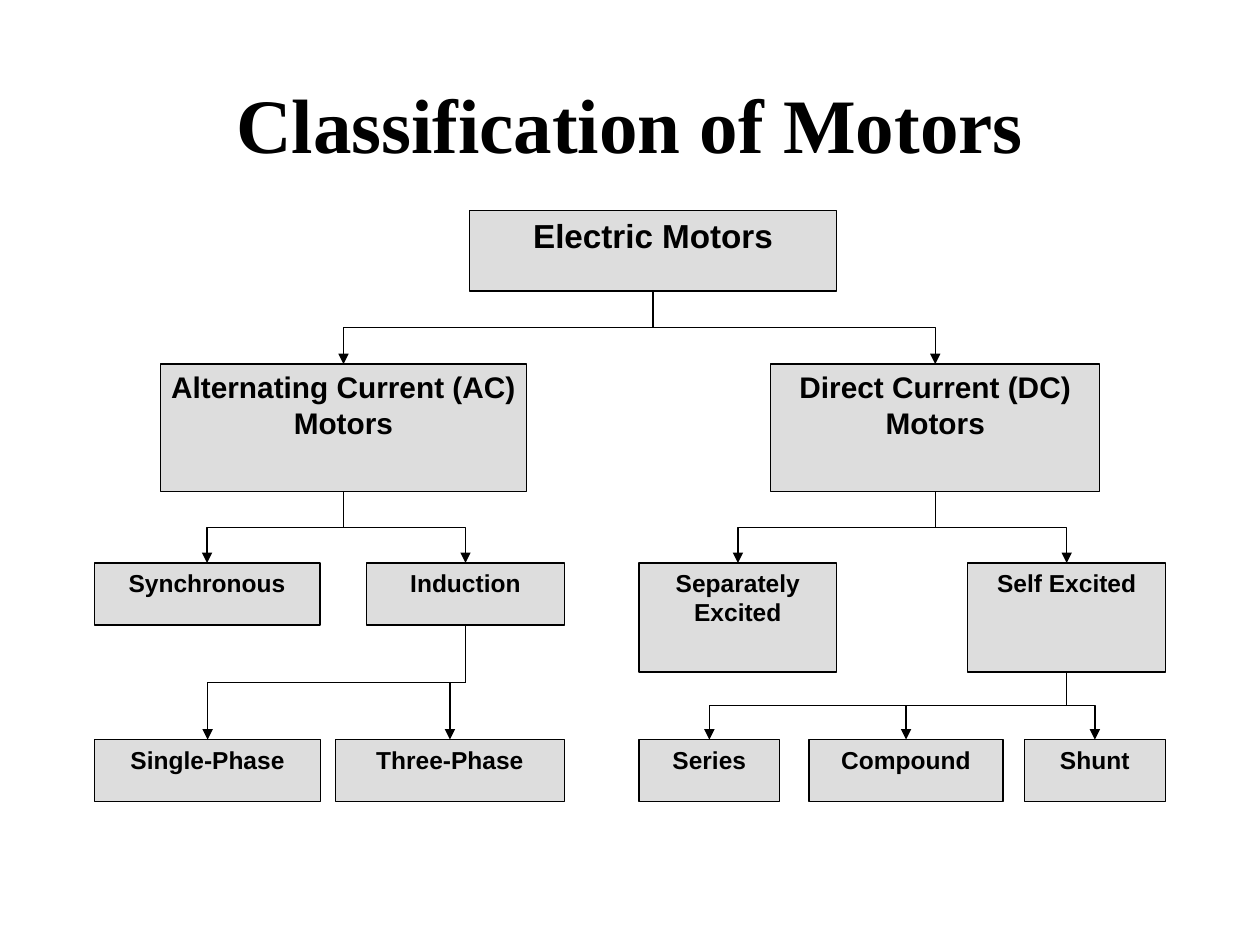
from lxml import etree
from pptx import Presentation
from pptx.dml.color import RGBColor
from pptx.enum.shapes import MSO_CONNECTOR, MSO_SHAPE
from pptx.enum.text import MSO_ANCHOR, PP_ALIGN
from pptx.oxml.ns import qn
from pptx.util import Cm, Pt

ELBOW = MSO_CONNECTOR.ELBOW
RECTANGLE = MSO_SHAPE.RECTANGLE
TOP, MIDDLE = MSO_ANCHOR.TOP, MSO_ANCHOR.MIDDLE
CENTER = PP_ALIGN.CENTER
BOTTOM_SITE, TOP_SITE = 2, 0

TITLE = "Classification of Motors"
BLACK, GREY = "000000", "DDDDDD"
LINE_WIDTH = Pt(0.75)

# Levels of the tree: top (cm), font size (pt), boxes
# Box: name, parent, left, width, height (cm)
LEVELS = [
    (4.24, 19, [("Electric Motors", None, 9.47, 7.39, 1.63)]),
    (7.34, 17, [
        ("Alternating Current (AC) Motors", "Electric Motors", 3.23, 7.39, 2.57),
        ("Direct Current (DC) Motors", "Electric Motors", 15.54, 6.63, 2.57),
    ]),
    (11.35, 14, [
        ("Synchronous", "Alternating Current (AC) Motors", 1.9, 4.55, 1.25),
        ("Induction", "Alternating Current (AC) Motors", 7.39, 3.99, 1.25),
        ("Separately Excited", "Direct Current (DC) Motors", 12.88, 3.99, 2.2),
        ("Self Excited", "Direct Current (DC) Motors", 19.51, 3.99, 2.2),
    ]),
    (14.91, 14, [
        ("Single-Phase", "Induction", 1.9, 4.57, 1.25),
        ("Three-Phase", "Induction", 6.76, 4.62, 1.25),
        ("Series", "Self Excited", 12.88, 2.84, 1.25),
        ("Compound", "Self Excited", 16.31, 3.91, 1.25),
        ("Shunt", "Self Excited", 20.65, 2.84, 1.25),
    ]),
]


def color(value):
    return RGBColor.from_string(value)


def write(shape, text, font_name, size, anchor):
    frame = shape.text_frame
    frame.text = text
    frame.word_wrap = True
    frame.vertical_anchor = anchor
    frame.margin_left = frame.margin_right = Cm(0.18)
    frame.margin_top = frame.margin_bottom = Cm(0.1)
    paragraph = frame.paragraphs[0]
    paragraph.alignment = CENTER
    font = paragraph.runs[0].font
    font.name, font.size, font.bold = font_name, Pt(size), True
    font.color.rgb = color(BLACK)


def add_box(slide, text, left, top, width, height, size):
    shape = slide.shapes.add_shape(RECTANGLE, Cm(left), Cm(top), Cm(width), Cm(height))
    shape.shadow.inherit = False
    shape.fill.solid()
    shape.fill.fore_color.rgb = color(GREY)
    shape.line.color.rgb = color(BLACK)
    shape.line.width = LINE_WIDTH
    write(shape, text, "Arial", size, TOP)
    return shape


def add_branch(slide, parent, child):
    """Join parent bottom to child top by an arrow that runs down, across, down."""
    start_x = parent.left + parent.width // 2
    start_y = parent.top + parent.height
    end_x = child.left + child.width // 2
    end_y = child.top
    connector = slide.shapes.add_connector(ELBOW, start_x, start_y, end_x, end_y)
    connector.begin_connect(parent, BOTTOM_SITE)
    connector.end_connect(child, TOP_SITE)

    # The preset elbow starts sideways, so it is turned about its centre.
    drop, reach = end_y - start_y, abs(end_x - start_x)
    connector.left = (start_x + end_x - drop) // 2
    connector.top = (start_y + end_y - reach) // 2
    connector.width, connector.height = drop, reach
    properties = connector._element.spPr
    transform = properties.find(qn("a:xfrm"))
    rightward = end_x > start_x
    transform.set("rot", str((270 if rightward else 90) * 60000))
    transform.set("flipH", "1" if rightward else "0")

    connector.line.color.rgb = color(BLACK)
    connector.line.width = LINE_WIDTH
    etree.SubElement(properties.find(qn("a:ln")), qn("a:tailEnd"), type="triangle")
    etree.SubElement(properties, qn("a:effectLst"))


def main():
    presentation = Presentation()
    presentation.slide_width, presentation.slide_height = Cm(25.4), Cm(19.05)
    slide = presentation.slides.add_slide(presentation.slide_layouts[6])

    title = slide.shapes.add_textbox(Cm(1.27), Cm(0.85), Cm(22.86), Cm(3.25))
    write(title, TITLE, "Times New Roman", 44, MIDDLE)

    boxes = {}
    for top, size, level in LEVELS:
        for name, parent, left, width, height in level:
            boxes[name] = add_box(slide, name, left, top, width, height, size)
            if parent:
                add_branch(slide, boxes[parent], boxes[name])

    presentation.save("out.pptx")


if __name__ == "__main__":
    main()
